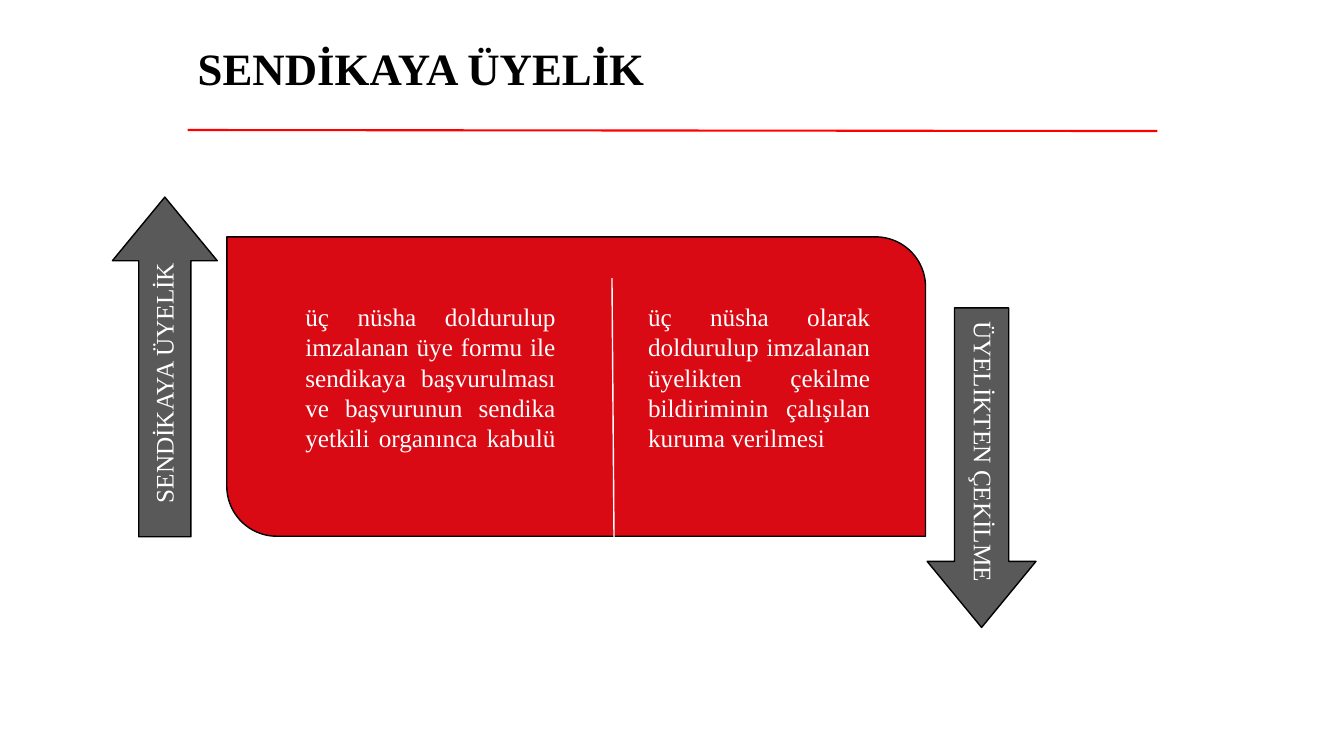
from dataclasses import dataclass

from lxml import etree
from pptx import Presentation
from pptx.dml.color import RGBColor
from pptx.enum.shapes import MSO_CONNECTOR, MSO_SHAPE
from pptx.enum.text import MSO_ANCHOR, PP_ALIGN
from pptx.oxml.ns import qn
from pptx.util import Inches, Pt

STRAIGHT = MSO_CONNECTOR.STRAIGHT
RIGHT_ARROW = MSO_SHAPE.RIGHT_ARROW
PANEL_SHAPE = MSO_SHAPE.ROUND_2_DIAG_RECTANGLE
MIDDLE, TOP = MSO_ANCHOR.MIDDLE, MSO_ANCHOR.TOP
LEFT, CENTER, JUSTIFY = PP_ALIGN.LEFT, PP_ALIGN.CENTER, PP_ALIGN.JUSTIFY


@dataclass(frozen=True)
class Theme:
    """Colours, font and type sizes of the slide."""
    font: str = "Times New Roman"
    title_size: int = 32
    body_size: int = 18
    black: RGBColor = RGBColor(0x00, 0x00, 0x00)
    white: RGBColor = RGBColor(0xFF, 0xFF, 0xFF)
    rule: RGBColor = RGBColor(0xFF, 0x00, 0x00)
    panel: RGBColor = RGBColor(0xD9, 0x0A, 0x14)
    arrow: RGBColor = RGBColor(0x59, 0x59, 0x59)


THEME = Theme()
JOINING = ("üç nüsha doldurulup imzalanan üye formu ile sendikaya başvurulması "
           "ve başvurunun sendika yetkili organınca kabulü ")
LEAVING = ("üç nüsha olarak doldurulup imzalanan üyelikten çekilme "
           "bildiriminin çalışılan kuruma verilmesi")


def to_inches(values):
    """Convert numbers to lengths."""
    return [Inches(value) for value in values]


def write_text(shape, text, size, color, alignment, anchor, spacing=1.0, bold=False):
    """Put one formatted paragraph into a shape."""
    frame = shape.text_frame
    frame.text = text
    frame.word_wrap = True
    frame.vertical_anchor = anchor
    paragraph = frame.paragraphs[0]
    paragraph.alignment = alignment
    paragraph.line_spacing = spacing
    font = paragraph.runs[0].font
    font.name, font.size, font.bold = THEME.font, Pt(size), bold
    font.color.rgb = color


def add_title(slide, text, box):
    """Place and format the title placeholder."""
    title = slide.shapes.title
    title.left, title.top, title.width, title.height = to_inches(box)
    write_text(title, text, THEME.title_size, THEME.black, LEFT, MIDDLE, 0.9, True)


def add_line(slide, start, end, color, width):
    """Draw a straight line without a shadow."""
    line = slide.shapes.add_connector(STRAIGHT, *to_inches(start + end))
    line.line.color.rgb = color
    line.line.width = Pt(width)
    etree.SubElement(line._element.spPr, qn("a:effectLst"))


def add_block(slide, kind, box, color, adjustments, rotation=0):
    """Draw a filled shape with a thin black outline."""
    shape = slide.shapes.add_shape(kind, *to_inches(box))
    for index, value in enumerate(adjustments):
        shape.adjustments[index] = value
    shape.rotation = rotation
    shape.shadow.inherit = False
    shape.fill.solid()
    shape.fill.fore_color.rgb = color
    shape.line.color.rgb = THEME.black
    shape.line.width = Pt(1)


def add_body(slide, text, box):
    """Add a justified text column."""
    column = slide.shapes.add_textbox(*to_inches(box))
    write_text(column, text, THEME.body_size, THEME.white, JUSTIFY, TOP)


def add_labelled_arrow(slide, text, arrow_box, label_box, rotation):
    """Draw a turned arrow with its label."""
    add_block(slide, RIGHT_ARROW, arrow_box, THEME.arrow, (0.498, 0.607), rotation)
    label = slide.shapes.add_textbox(*to_inches(label_box))
    label.rotation = rotation
    frame = label.text_frame
    frame.margin_left = frame.margin_right = Inches(0.07)
    frame.margin_top = frame.margin_bottom = Inches(0.07)
    write_text(label, text, THEME.body_size, THEME.white, CENTER, MIDDLE, 0.9)


def main():
    """Build and save the slide."""
    presentation = Presentation()
    presentation.slide_width = Inches(13.33)
    presentation.slide_height = Inches(7.5)
    slide = presentation.slides.add_slide(presentation.slide_layouts[5])

    add_line(slide, (1.86, 1.29), (11.48, 1.3), THEME.rule, 1.5)
    add_title(slide, "SENDİKAYA ÜYELİK", (1.86, 0.35, 9.62, 0.71))
    add_block(slide, PANEL_SHAPE, (2.25, 2.35, 6.93, 2.97), THEME.panel, (0, 0.167))
    add_line(slide, (6.07, 2.76), (6.09, 5.33), THEME.white, 1)
    add_labelled_arrow(slide, "SENDİKAYA ÜYELİK", (-0.05, 3.12, 3.37, 1.04),
                       (0.11, 3.54, 3.06, 0.52), 270)
    add_labelled_arrow(slide, "ÜYELİKTEN ÇEKİLME", (8.15, 4.1, 3.17, 1.08),
                       (8.32, 4.21, 2.84, 0.54), 90)
    add_body(slide, JOINING, (2.93, 2.94, 2.68, 1.62))
    add_body(slide, LEAVING, (6.33, 2.94, 2.4, 1.62))

    presentation.save("out.pptx")


if __name__ == "__main__":
    main()
